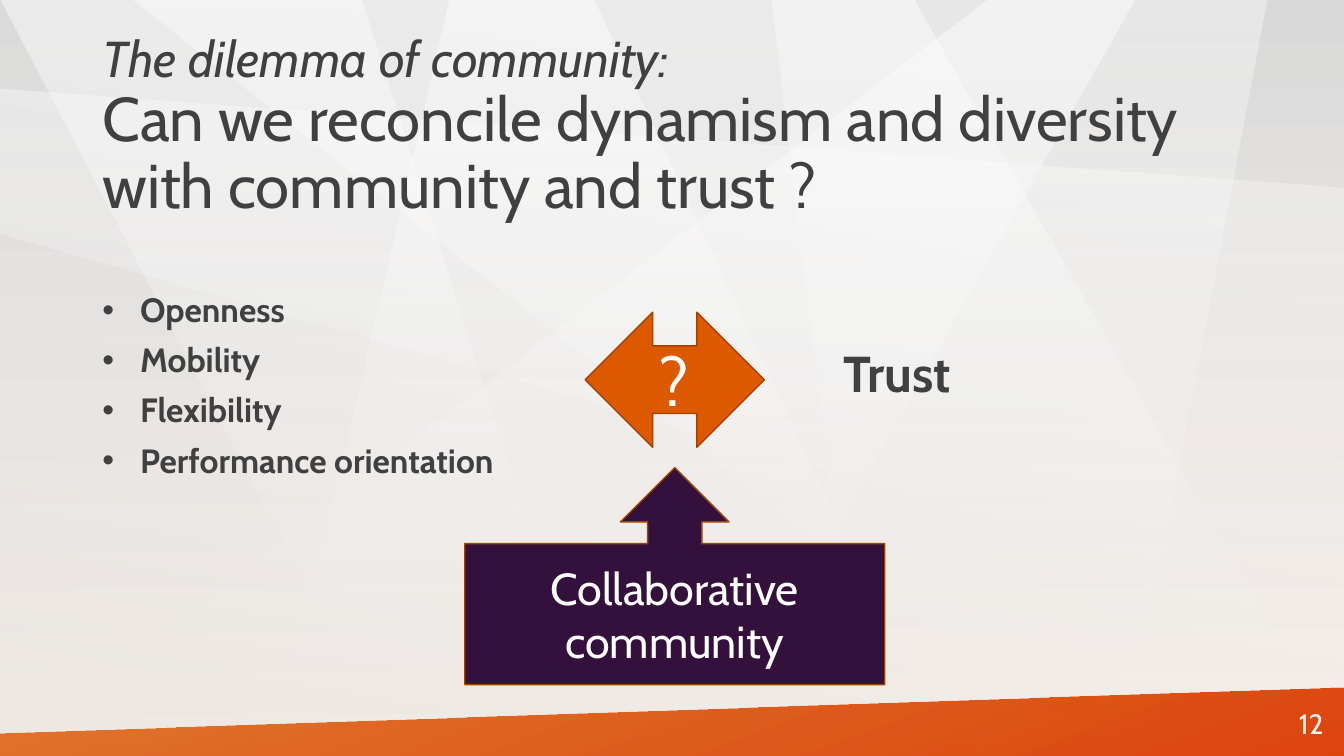
"""Build the slide on the dilemma of community."""
from lxml import etree
from pptx import Presentation
from pptx.dml.color import RGBColor
from pptx.enum.shapes import MSO_SHAPE
from pptx.enum.text import MSO_ANCHOR, PP_ALIGN
from pptx.oxml.ns import qn
from pptx.util import Pt

MIDDLE, TOP = MSO_ANCHOR.MIDDLE, MSO_ANCHOR.TOP
LEFT, CENTER, RIGHT = PP_ALIGN.LEFT, PP_ALIGN.CENTER, PP_ALIGN.RIGHT
RECTANGLE = MSO_SHAPE.RECTANGLE
DOUBLE_ARROW = MSO_SHAPE.LEFT_RIGHT_ARROW
ARROW_CALLOUT = MSO_SHAPE.UP_ARROW_CALLOUT

FONT = "Cabin"
WIDTH, HEIGHT = 960, 540
COLORS = {
    "text": "404040", "white": "FFFFFF", "cream": "FCF5EF",
    "light grey": "D9D9D9", "grey": "BFBFBF", "orange": "DD5900",
    "red": "DC3C00", "rust": "A34200", "purple": "34103D",
}

TITLE_LEAD = "The dilemma of community:"
TITLE_QUESTION = "Can we reconcile dynamism and diversity with community and trust ?"
QUALITIES = ["Openness", "Mobility", "Flexibility", "Performance orientation"]

# Each facet: opacity of its upper edge, then its corners.
FACETS = [
    (50, [(705, 0), (0, 540), (505, 540), (810, 0)]),
    (50, [(0, 0), (258, 0), (428, 540), (282, 540)]),
    (50, [(95, 0), (653, 0), (960, 540), (780, 540)]),
    (40, [(551, 0), (616, 540), (803, 540), (905, 0)]),
    (50, [(424, 0), (321, 0), (196, 540), (676, 540)]),
    (40, [(0, 63), (960, 134), (960, 439), (0, 167)]),
]
BAND = [(0, 523.5), (960, 491), (960, 540), (0, 540)]


def rgb(name):
    return RGBColor.from_string(COLORS[name])


def set_gradient(fill, container, angle, start, end):
    fill.background()
    empty_fill = container.find(".//" + qn("a:noFill"))
    gradient = etree.Element(qn("a:gradFill"), rotWithShape="1")
    stops = etree.SubElement(gradient, qn("a:gsLst"))
    for position, (color, opacity) in ((0, start), (100, end)):
        stop = etree.SubElement(stops, qn("a:gs"), pos=str(position * 1000))
        value = etree.SubElement(stop, qn("a:srgbClr"), val=COLORS[color])
        etree.SubElement(value, qn("a:alpha"), val=str(opacity * 1000))
    etree.SubElement(gradient, qn("a:lin"), ang=str(angle * 60000), scaled="0")
    empty_fill.getparent().replace(empty_fill, gradient)


def finish_backdrop(shape, angle, start, end):
    shape.shadow.inherit = False
    set_gradient(shape.fill, shape._element, angle, start, end)
    shape.line.fill.background()


def add_polygon(slide, corners):
    points = [(Pt(x), Pt(y)) for x, y in corners]
    builder = slide.shapes.build_freeform(*points[0])
    builder.add_line_segments(points[1:], close=True)
    return builder.convert_to_shape()


def style(paragraph, size, color="text", align=LEFT, bold=False):
    paragraph.alignment = align
    font = paragraph.font
    font.name, font.size, font.bold = FONT, Pt(size), bold
    font.color.rgb = rgb(color)


def add_text(slide, box, anchor=TOP):
    frame = slide.shapes.add_textbox(*map(Pt, box)).text_frame
    frame.word_wrap = True
    frame.vertical_anchor = anchor
    return frame


def add_label(slide, kind, box, text, size, color):
    shape = slide.shapes.add_shape(kind, *map(Pt, box))
    shape.shadow.inherit = False
    shape.fill.solid()
    shape.fill.fore_color.rgb = rgb(color)
    shape.line.color.rgb = rgb("rust")
    shape.line.width = Pt(1)
    frame = shape.text_frame
    frame.word_wrap = True
    frame.vertical_anchor = MIDDLE
    frame.text = text
    style(frame.paragraphs[0], size, "white", CENTER)


def add_backdrop(slide):
    set_gradient(slide.background.fill, slide._element, 90,
                 ("light grey", 50), ("cream", 100))
    for opacity, corners in FACETS:
        finish_backdrop(add_polygon(slide, corners), 90,
                        ("white", opacity), ("white", 0))
    veil = slide.shapes.add_shape(RECTANGLE, 0, 0, Pt(WIDTH), Pt(HEIGHT))
    finish_backdrop(veil, 280, ("grey", 25), ("white", 0))
    finish_backdrop(add_polygon(slide, BAND), 70, ("orange", 80), ("red", 95))


def add_title(slide):
    paragraph = add_text(slide, (66, 39, 851, 104.5), MIDDLE).paragraphs[0]
    paragraph.line_spacing = 0.9
    style(paragraph, 44.1)
    lead = paragraph.add_run()
    lead.text = TITLE_LEAD
    lead.font.size, lead.font.italic = Pt(36), True
    paragraph.add_line_break()
    paragraph.add_run().text = TITLE_QUESTION


def add_qualities(slide):
    frame = add_text(slide, (66, 206, 324, 314))
    for index, quality in enumerate(QUALITIES):
        paragraph = frame.paragraphs[0] if index == 0 else frame.add_paragraph()
        paragraph.text = quality
        paragraph.line_spacing = 0.9
        paragraph.space_before = Pt(10 if index else 0)
        properties = paragraph._p.get_or_add_pPr()
        properties.set("marL", str(Pt(27)))
        properties.set("indent", str(-Pt(27)))
        bullet_color = etree.SubElement(properties, qn("a:buClr"))
        etree.SubElement(bullet_color, qn("a:srgbClr"), val=COLORS["text"])
        etree.SubElement(properties, qn("a:buFont"), typeface="Arial")
        etree.SubElement(properties, qn("a:buChar"), char="•")
        style(paragraph, 24, bold=True)


def main():
    presentation = Presentation()
    presentation.slide_width, presentation.slide_height = Pt(WIDTH), Pt(HEIGHT)
    slide = presentation.slides.add_slide(presentation.slide_layouts[6])
    add_backdrop(slide)
    add_title(slide)
    add_qualities(slide)

    number = add_text(slide, (875.5, 502, 77, 29), MIDDLE).paragraphs[0]
    number.text = "12"
    style(number, 20, "cream", RIGHT)

    add_label(slide, DOUBLE_ARROW, (418, 223, 128, 96.5), "?", 48, "orange")
    trust = add_text(slide, (595.5, 246, 324, 274)).paragraphs[0]
    trust.text = "Trust"
    trust.line_spacing = 0.9
    style(trust, 36, bold=True)
    add_label(slide, ARROW_CALLOUT, (332, 334, 300, 155),
              "Collaborative community", 32, "purple")
    presentation.save("out.pptx")


if __name__ == "__main__":
    main()
